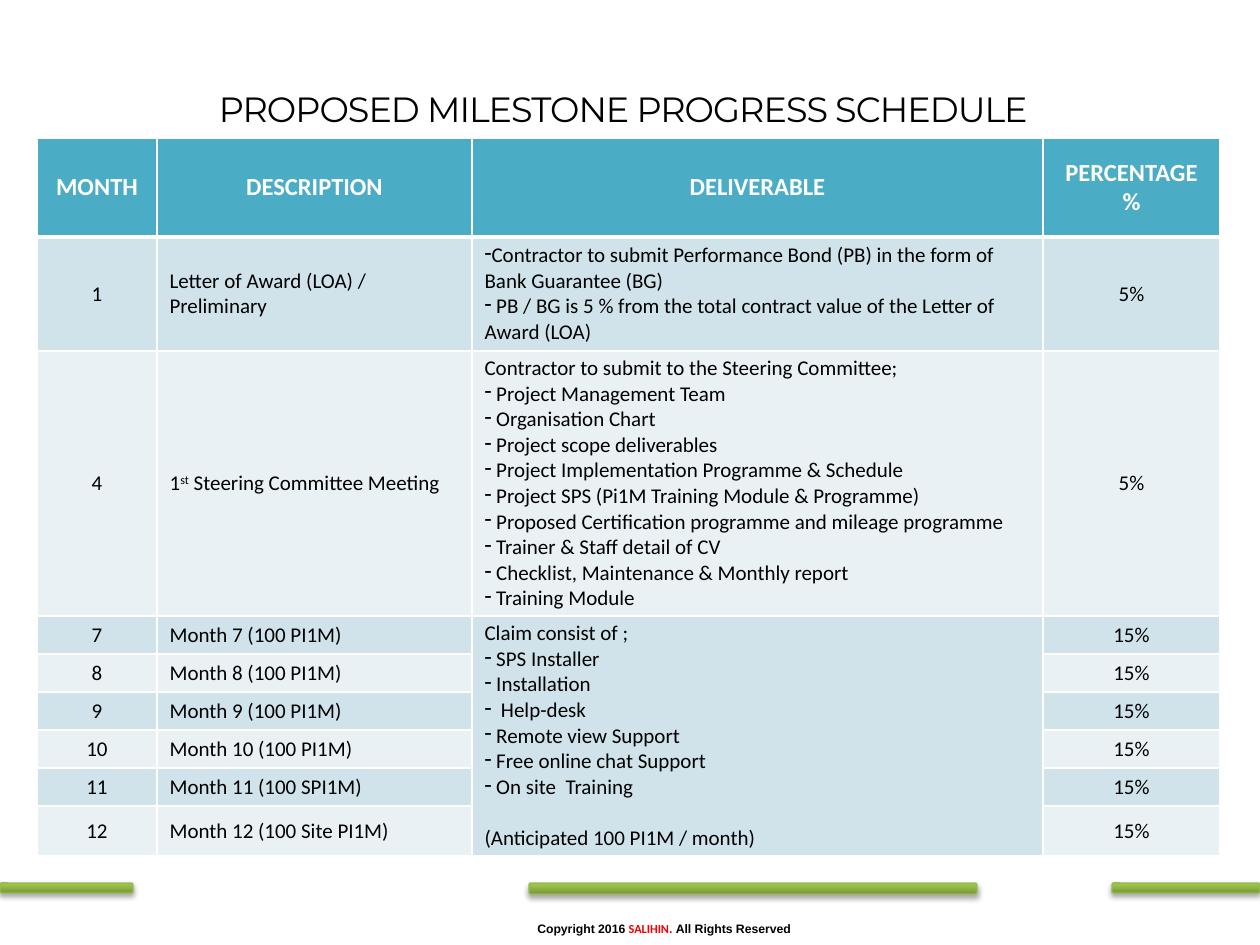
from typing import NamedTuple

from lxml import etree
from pptx import Presentation
from pptx.dml.color import RGBColor
from pptx.enum.shapes import MSO_SHAPE
from pptx.enum.text import MSO_ANCHOR, MSO_AUTO_SIZE, PP_ALIGN
from pptx.oxml.ns import qn
from pptx.util import Emu, Pt

ROUNDED = MSO_SHAPE.ROUNDED_RECTANGLE
MIDDLE, BOTTOM = MSO_ANCHOR.MIDDLE, MSO_ANCHOR.BOTTOM
LEFT, CENTER = PP_ALIGN.LEFT, PP_ALIGN.CENTER
PX_PER_INCH = 126
WHITE, BLACK, RED = "FFFFFF", "000000", "F00000"
HEADER_FILL, BANDS = "4BACC6", ("D0E3EA", "E9F1F5")


class Box(NamedTuple):
    left: int
    top: int
    width: int
    height: int


class Line(NamedTuple):
    text: str
    bullet: bool = False
    superscript: str = ""
    rest: str = ""
    space_before: float = 0


class Milestone(NamedTuple):
    month: str
    description: Line
    deliverables: list[Line]
    percentage: str
    height: int


def dashed(*texts: str) -> list[Line]:
    return [Line(text, bullet=True) for text in texts]


FIRST_MEETING = [Line("Contractor to submit to the Steering Committee;")] + dashed(
    " Project Management Team",
    " Organisation Chart",
    " Project scope deliverables",
    " Project Implementation Programme & Schedule",
    " Project SPS (Pi1M Training Module & Programme)",
    " Proposed Certification programme and mileage programme",
    " Trainer & Staff detail of CV",
    " Checklist, Maintenance & Monthly report",
    " Training Module",
)
CLAIM = [
    Line("Claim consist of ;"),
    *dashed(" SPS Installer", " Installation", "  Help-desk", " Remote view Support",
            " Free online chat Support", " On site  Training"),
    Line("(Anticipated 100 PI1M / month)", space_before=14.6),
]
AWARD = dashed(
    "Contractor to submit Performance Bond (PB) in the form of Bank Guarantee (BG)",
    " PB / BG is 5 % from the total contract value of the Letter of Award (LOA)",
)
CLAIM_SITES = {7: "PI1M", 8: "PI1M", 9: "PI1M", 10: "PI1M", 11: "SPI1M", 12: "Site PI1M"}
MILESTONES = [
    Milestone("1", Line("Letter of Award (LOA) / Preliminary"), AWARD, "5%", 114),
    Milestone("4", Line("1", superscript="st", rest=" Steering Committee Meeting"),
              FIRST_MEETING, "5%", 265),
] + [
    Milestone(str(month), Line(f"Month {month} (100 {sites})"),
              CLAIM if month == 7 else [], "15%", 50 if month == 12 else 38)
    for month, sites in CLAIM_SITES.items()
]
HEADINGS = ("MONTH", "DESCRIPTION", "DELIVERABLE", "PERCENTAGE %")
HEADER_HEIGHT = 99
COLUMN_WIDTHS = (120, 315, 571, 177)
BARS = (Box(0, 883, 133, 10), Box(1112, 883, 148, 10), Box(529, 883, 448, 11))


def px(length: int) -> Emu:
    return Emu(round(length * 914400 / PX_PER_INCH))


def color(value: str) -> RGBColor:
    return RGBColor.from_string(value)


def set_font(font, name: str, size: float, value: str, bold: bool = False) -> None:
    font.name, font.size, font.bold = name, Pt(size), bold
    font.color.rgb = color(value)


def add_bar(page, box: Box) -> None:
    bar = page.shapes.add_shape(ROUNDED, *map(px, box))
    bar.fill.gradient()
    bar.fill.gradient_angle = 90
    for stop, position, value in zip(bar.fill.gradient_stops, (0, 0.8), ("779737", "9BC348")):
        stop.position, stop.color.rgb = position, color(value)
    bar.line.color.rgb = color("98B955")
    bar.line.width = Pt(0.75)
    bar.shadow.inherit = False
    effects = bar._element.spPr.find(qn("a:effectLst"))
    shadow = etree.SubElement(effects, qn("a:outerShdw"), blurRad="39400", dist="22900",
                              dir="5400000", rotWithShape="0")
    tint = etree.SubElement(shadow, qn("a:srgbClr"), val=BLACK)
    etree.SubElement(tint, qn("a:alpha"), val="35000")


def add_copyright(page) -> None:
    box = page.shapes.add_textbox(*map(px, Box(525, 915, 529, 28)))
    box.text_frame.word_wrap = True
    para = box.text_frame.paragraphs[0]
    for text, font, value in (("Copyright 2016 ", "Arial", BLACK), ("SALIHIN", "Calibri", RED),
                              (". ", "Arial", RED), ("All Rights Reserved", "Arial", BLACK)):
        span = para.add_run()
        span.text = text
        set_font(span.font, font, 7, value, bold=True)


def set_title(page) -> None:
    title = page.shapes.title
    title.left, title.top, title.width, title.height = map(px, Box(35, 20, 1176, 116))
    frame = title.text_frame
    frame.text = "PROPOSED MILESTONE PROGRESS SCHEDULE"
    frame.auto_size, frame.vertical_anchor = MSO_AUTO_SIZE.NONE, BOTTOM
    para = frame.paragraphs[0]
    para.alignment = CENTER
    set_font(para.font, "Montserrat", 20, BLACK)
    para.runs[0]._r.get_or_add_rPr().set("spc", "-60")


def style_cell(cell, fill: str, bottom_width: float = 1) -> None:
    properties = cell._tc.get_or_add_tcPr()
    for side in "LRTB":
        width = Pt(bottom_width if side == "B" else 1)
        border = etree.SubElement(properties, qn(f"a:ln{side}"), w=str(width))
        solid = etree.SubElement(border, qn("a:solidFill"))
        etree.SubElement(solid, qn("a:srgbClr"), val=WHITE)
    cell.fill.solid()
    cell.fill.fore_color.rgb = color(fill)
    cell.vertical_anchor = MIDDLE
    cell.margin_top = cell.margin_bottom = px(4)


def write_cell(cell, lines: list[Line], align, size: float = 12,
               value: str = BLACK, bold: bool = False) -> None:
    frame = cell.text_frame
    for index, line in enumerate(lines):
        para = frame.add_paragraph() if index else frame.paragraphs[0]
        para.alignment = align
        if line.space_before:
            para.space_before = Pt(line.space_before)
        if line.bullet:
            etree.SubElement(para._p.get_or_add_pPr(), qn("a:buChar"), char="-")
        para.add_run().text = line.text
        if line.superscript:
            raised = para.add_run()
            raised.text = line.superscript
            raised._r.get_or_add_rPr().set("baseline", "30000")
            para.add_run().text = line.rest
        set_font(para.font, "Calibri", size, value, bold)


def add_schedule(page) -> None:
    heights = [HEADER_HEIGHT] + [milestone.height for milestone in MILESTONES]
    box = Box(37, 138, sum(COLUMN_WIDTHS), sum(heights))
    table = page.shapes.add_table(len(heights), len(COLUMN_WIDTHS), *map(px, box)).table
    for column, width in zip(table.columns, COLUMN_WIDTHS):
        column.width = px(width)
    for row, height in zip(table.rows, heights):
        row.height = px(height)
    for cell, heading in zip(table.rows[0].cells, HEADINGS):
        style_cell(cell, HEADER_FILL, bottom_width=3)
        write_cell(cell, [Line(heading)], CENTER, 14, WHITE, bold=True)
    for index, milestone in enumerate(MILESTONES):
        contents = ([Line(milestone.month)], [milestone.description],
                    milestone.deliverables, [Line(milestone.percentage)])
        cells = table.rows[index + 1].cells
        for cell, lines, align in zip(cells, contents, (CENTER, LEFT, LEFT, CENTER)):
            style_cell(cell, BANDS[index % 2])
            write_cell(cell, lines, align)
    last_row = len(heights) - 1
    table.cell(last_row - len(CLAIM_SITES) + 1, 2).merge(table.cell(last_row, 2))


def main() -> None:
    deck = Presentation()
    deck.slide_width, deck.slide_height = px(1260), px(945)
    page = deck.slides.add_slide(deck.slide_layouts[5])
    add_copyright(page)
    for bar in BARS:
        add_bar(page, bar)
    add_schedule(page)
    set_title(page)
    deck.save("out.pptx")


if __name__ == "__main__":
    main()
